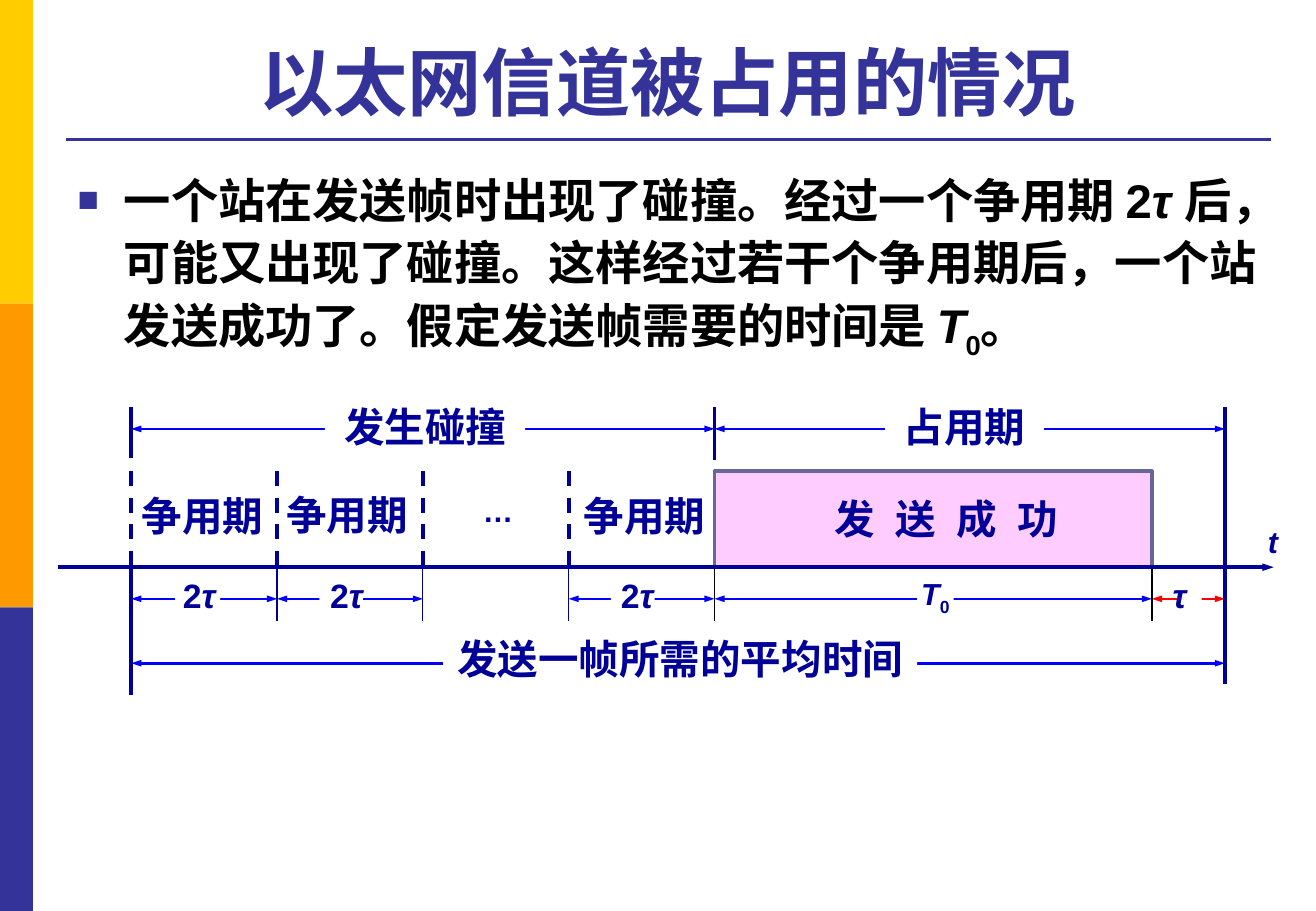
from typing import NamedTuple

from lxml.etree import SubElement
from pptx import Presentation
from pptx.dml.color import RGBColor
from pptx.enum.dml import MSO_LINE
from pptx.enum.shapes import MSO_CONNECTOR, MSO_SHAPE
from pptx.enum.text import MSO_ANCHOR, PP_ALIGN
from pptx.oxml.ns import qn
from pptx.util import Inches, Pt

COLORS = {
    "yellow": "FFCC00", "orange": "FF9900", "indigo": "333399", "blue": "0000FF",
    "red": "FF0000", "navy": "000099", "black": "000000", "white": "FFFFFF",
    "pink": "FFCCFF", "slate": "666699",
}
FONT = "Arial"
WIDTH, HEIGHT = Inches(10.83), Inches(7.5)
ORIGIN, COLUMN = Inches(1.08), Inches(0.6)
AXIS, ROW = Inches(4.67), Inches(0.26)
TOP, BOX_TOP, SPAN_ROW, TICK_END, TOTAL_ROW = -5.08, -3.04, -4.38, 1.7, 3.04


class Span(NamedTuple):
    text: str
    italic: bool = False
    subscript: bool = False


class Rule(NamedTuple):
    start: tuple[float, float]
    end: tuple[float, float]
    color: str = "navy"
    weight: float = 2.25
    head: bool = False
    tail: bool = False
    dashed: bool = False


class Label(NamedTuple):
    spans: list[Span]
    column: float
    row: float
    size: float = 24
    columns: float = 2.18
    masked: bool = False
    spacing: int = 0


TWO_TAU = [Span("2"), Span("τ", True)]
CONTENTION = [Span("争用期")]

ARROWS = [
    Rule((first, row), (last, row), color, 1.5, True, True)
    for first, last, row, color in [
        (0, 15, TOTAL_ROW, "blue"), (0, 8, SPAN_ROW, "blue"), (8, 15, SPAN_ROW, "blue"),
        (14, 15, 1, "red"), (8, 14, 1, "blue"), (6, 8, 1, "blue"),
        (2, 4, 1, "blue"), (0, 2, 1, "blue"),
    ]
]
MASKS = [(0.6, 0.62), (2.58, 0.6), (6.58, 0.6), (10.78, 0.5), (14.35, 0.33)]
DIVIDERS = [Rule((column, BOX_TOP), (column, 0), dashed=True) for column in (0, 2, 4, 6)]
TICKS = [
    Rule((column, 0), (column, TICK_END), color, 0.75)
    for column, color in [(2, "navy"), (4, "navy"), (6, "navy"), (8, "black"), (14, "black")]
]
POSTS = [
    Rule((0, 0), (0, 4.04)),
    Rule((0, TOP), (0, -3.46)),
    Rule((8, TOP), (8, -3.38)),
    Rule((15, TOP), (15, 3.7)),
]
LABELS = [
    Label([Span("发 送 成 功")], 11.18, -1.54, columns=3.68, spacing=333),
    Label(CONTENTION, 0.98, -1.65),
    Label(CONTENTION, 2.96, -1.69),
    Label(CONTENTION, 7.04, -1.65),
    Label([Span("占用期")], 11.43, -4.46, masked=True),
    Label([Span("发生碰撞")], 4.03, -4.46, columns=2.75, masked=True),
    Label([Span("发送一帧所需的平均时间")], 7.53, 2.88, columns=6.5, masked=True),
    Label([Span("…")], 5.03, -1.81, 18, 0.75),
    Label(TWO_TAU, 0.93, 0.88, 20, 0.88),
    Label(TWO_TAU, 2.95, 0.88, 20, 0.88),
    Label(TWO_TAU, 6.94, 0.88, 20, 0.88),
    Label([Span("T", True), Span("0", subscript=True)], 11.03, 0.92, 18, 0.75),
    Label([Span("τ", True)], 14.38, 0.88, 20, 0.53),
    Label([Span("t", True)], 15.66, -0.81, 18, 0.48),
]
BODY = [
    Span("一个站在发送帧时出现了碰撞。经过一个争用期 2"),
    Span("τ ", True),
    Span("后，可能又出现了碰撞。这样经过若干个争用期后，一个站发送成功了。假定发送帧需要的时间是 "),
    Span("T", True),
    Span("0", subscript=True),
    Span("。"),
]


def paint(name: str) -> RGBColor:
    """Turn a palette name into a colour."""
    return RGBColor.from_string(COLORS[name])


def across(column: float) -> int:
    """Give the left offset of a timeline column."""
    return int(ORIGIN + column * COLUMN)


def down(row: float) -> int:
    """Give the top offset of a timeline row counted from the axis."""
    return int(AXIS + row * ROW)


def share(left: float, top: float, width: float, height: float) -> tuple[int, int, int, int]:
    """Turn percentages of the slide into a frame."""
    return (int(WIDTH * left / 100), int(HEIGHT * top / 100),
            int(WIDTH * width / 100), int(HEIGHT * height / 100))


def add_block(page, frame: tuple[int, int, int, int], color: str) -> None:
    """Draw a plain filled rectangle."""
    block = page.shapes.add_shape(MSO_SHAPE.RECTANGLE, *frame)
    block.shadow.inherit = False
    block.fill.solid()
    block.fill.fore_color.rgb = paint(color)
    block.line.fill.background()


def add_rule(page, rule: Rule) -> None:
    """Draw a straight line or arrow on the timeline grid."""
    line = page.shapes.add_connector(
        MSO_CONNECTOR.STRAIGHT, across(rule.start[0]), down(rule.start[1]),
        across(rule.end[0]), down(rule.end[1]))
    line.line.color.rgb = paint(rule.color)
    line.line.width = Pt(rule.weight)
    if rule.dashed:
        line.line.dash_style = MSO_LINE.DASH
    outline = line.line._get_or_add_ln()
    for tag, wanted in (("a:headEnd", rule.head), ("a:tailEnd", rule.tail)):
        if wanted:
            SubElement(outline, qn(tag), type="triangle", w="sm", len="med")
    SubElement(line._element.spPr, qn("a:effectLst"))


def write(para, spans: list[Span], size: float, color: str, spacing: int = 0) -> None:
    """Fill a paragraph with bold formatted spans."""
    for part in spans:
        span = para.add_run()
        span.text = part.text
        span.font.name = FONT
        span.font.size = Pt(size)
        span.font.bold = True
        span.font.italic = part.italic
        span.font.color.rgb = paint(color)
        properties = span._r.get_or_add_rPr()
        if part.subscript:
            properties.set("baseline", "-25000")
        if spacing:
            properties.set("spc", str(spacing))


def add_label(page, label: Label) -> None:
    """Place a label centred on a timeline position."""
    width, height = int(label.columns * COLUMN), Pt(label.size * 1.5)
    box = page.shapes.add_textbox(
        across(label.column) - width // 2, down(label.row) - height // 2, width, height)
    if label.masked:
        box.fill.solid()
        box.fill.fore_color.rgb = paint("white")
    box.text_frame.word_wrap = False
    box.text_frame.vertical_anchor = MSO_ANCHOR.MIDDLE
    para = box.text_frame.paragraphs[0]
    para.alignment = PP_ALIGN.CENTER
    write(para, label.spans, label.size, "navy", label.spacing)


def add_heading(page) -> None:
    """Write the title and the bulleted explanation."""
    title = page.shapes.add_textbox(*share(5, 2.8, 91.5, 11.6)).text_frame
    title.word_wrap = True
    title.vertical_anchor = MSO_ANCHOR.BOTTOM
    title.paragraphs[0].alignment = PP_ALIGN.CENTER
    write(title.paragraphs[0], [Span("以太网信道被占用的情况")], 44, "indigo")

    body = page.shapes.add_textbox(*share(5, 17.5, 91.5, 72)).text_frame
    body.word_wrap = True
    para = body.paragraphs[0]
    para.line_spacing = 1.1
    properties = para._p.get_or_add_pPr()
    properties.set("marL", str(Inches(0.38)))
    properties.set("indent", str(-Inches(0.38)))
    SubElement(SubElement(properties, qn("a:buClr")), qn("a:srgbClr"), val=COLORS["indigo"])
    SubElement(properties, qn("a:buSzPct"), val="75000")
    SubElement(properties, qn("a:buFont"), typeface=FONT)
    SubElement(properties, qn("a:buChar"), char="■")
    write(para, BODY, 28, "black")


def add_success_box(page) -> None:
    """Draw the open-bottomed box of the successful transmission."""
    builder = page.shapes.build_freeform(across(8), down(0))
    builder.add_line_segments(
        [(across(8), down(BOX_TOP)), (across(14), down(BOX_TOP)), (across(14), down(0))],
        close=False)
    outline = builder.convert_to_shape()
    outline.shadow.inherit = False
    outline.fill.solid()
    outline.fill.fore_color.rgb = paint("pink")
    outline.line.color.rgb = paint("slate")
    outline.line.width = Pt(2.25)


def main() -> None:
    """Build the slide and save it."""
    deck = Presentation()
    deck.slide_width, deck.slide_height = WIDTH, HEIGHT
    page = deck.slides.add_slide(deck.slide_layouts[6])
    for index, color in enumerate(("yellow", "orange", "indigo")):
        add_block(page, share(0, index * 100 / 3, 2.5, 100 / 3), color)
    add_rule(page, Rule((-0.9, -13.54), (15.63, -13.54), "indigo"))
    add_heading(page)
    for arrow in ARROWS:
        add_rule(page, arrow)
    for column, columns in MASKS:
        add_block(page, (across(column), down(0.5), int(columns * COLUMN), ROW), "white")
    add_success_box(page)
    for rule in DIVIDERS + TICKS + POSTS:
        add_rule(page, rule)
    for label in LABELS:
        add_label(page, label)
    add_rule(page, Rule((-1, 0), (15.67, 0), tail=True))
    deck.save("out.pptx")


if __name__ == "__main__":
    main()
